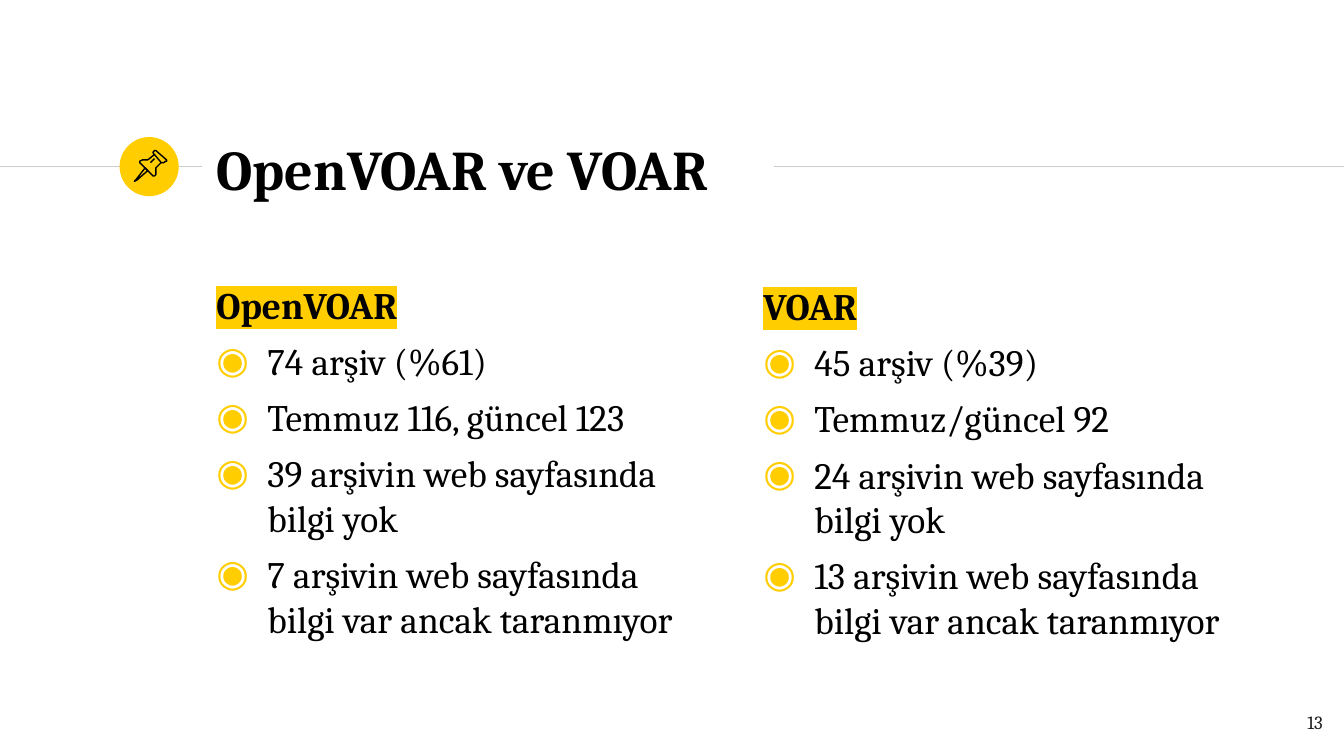
"""Builds a slide comparing two archive directories in two bulleted columns."""
from lxml import etree
from pptx import Presentation
from pptx import util as u
from pptx.dml.color import RGBColor
from pptx.enum import shapes, text
from pptx.oxml.ns import qn

COLORS = {"accent": "FFCD00", "rule": "CCCCCC", "ink": "000000", "number": "1D1D1B"}
FONT = "Cambria"
BULLET_INDENT = u.Inches(0.38)


def add_run(paragraph, wording, size, color="ink", bold=False):
    run = paragraph.add_run()
    run.text = wording
    run.font.size = u.Pt(size)
    run.font.bold = bold
    run.font.color.rgb = RGBColor.from_string(COLORS[color])
    run.font.name = FONT
    return run


def place(holder, left, top, width, height):
    holder.left, holder.top = u.Inches(left), u.Inches(top)
    holder.width, holder.height = u.Inches(width), u.Inches(height)
    frame = holder.text_frame
    frame.word_wrap = True
    frame.auto_size = text.MSO_AUTO_SIZE.NONE
    frame.margin_left = frame.margin_right = u.Inches(0.1)
    frame.margin_top = frame.margin_bottom = u.Inches(0.1)
    return frame


prs = Presentation()
prs.slide_width = u.Inches(10)
prs.slide_height = prs.slide_width * 9 // 16
slide = prs.slides.add_slide(prs.slide_layouts[3])
title, left_body, right_body = slide.placeholders

for start, end in [(0, 1.5), (5.76, 10)]:
    rule = slide.shapes.add_connector(
        shapes.MSO_CONNECTOR.STRAIGHT,
        u.Inches(start), u.Inches(1.24), u.Inches(end), u.Inches(1.24))
    rule.line.color.rgb = RGBColor.from_string(COLORS["rule"])
    rule.line.width = u.Pt(0.75)
    etree.SubElement(rule._element.spPr, qn("a:effectLst"))

badge = slide.shapes.add_shape(
    shapes.MSO_SHAPE.OVAL, u.Inches(0.89), u.Inches(1.02), u.Inches(0.44), u.Inches(0.44))
badge.shadow.inherit = False
badge.fill.solid()
badge.fill.fore_color.rgb = RGBColor.from_string(COLORS["accent"])
badge.line.fill.background()

heading = place(title, 1.51, 1.01, 5.3, 0.48)
heading.vertical_anchor = text.MSO_ANCHOR.MIDDLE
heading.paragraphs[0].alignment = text.PP_ALIGN.LEFT
add_run(heading.paragraphs[0], "OpenVOAR ve VOAR", 30, bold=True)

columns = [
    (left_body, (1.51, 2, 3.66, 3.41), "OpenVOAR", [
        "74 arşiv (%61)",
        "Temmuz 116, güncel 123",
        "39 arşivin web sayfasında bilgi yok",
        "7 arşivin web sayfasında bilgi var ancak taranmıyor"]),
    (right_body, (5.58, 2.01, 3.65, 3.41), "VOAR", [
        "45 arşiv (%39)",
        "Temmuz/güncel 92",
        "24 arşivin web sayfasında bilgi yok",
        "13 arşivin web sayfasında bilgi var ancak taranmıyor"]),
]
for body, box, directory, findings in columns:
    frame = place(body, *box)
    frame.vertical_anchor = text.MSO_ANCHOR.TOP
    label = frame.paragraphs[0]
    label.space_before = u.Pt(6)
    label_props = label._p.get_or_add_pPr()
    label_props.set("marL", "0")
    label_props.set("indent", "0")
    etree.SubElement(label_props, qn("a:buNone"))
    label_run = add_run(label, directory, 20, bold=True)
    highlight = etree.Element(qn("a:highlight"))
    etree.SubElement(highlight, qn("a:srgbClr"), val=COLORS["accent"])
    label_run.font._element.find(qn("a:solidFill")).addnext(highlight)

    for finding in findings:
        item = frame.add_paragraph()
        item.space_before = u.Pt(6)
        item_props = item._p.get_or_add_pPr()
        item_props.set("marL", str(BULLET_INDENT))
        item_props.set("indent", str(-BULLET_INDENT))
        bullet_color = etree.SubElement(item_props, qn("a:buClr"))
        etree.SubElement(bullet_color, qn("a:srgbClr"), val=COLORS["accent"])
        etree.SubElement(item_props, qn("a:buChar"), char="◉")
        add_run(item, finding, 20)

pin_strokes = [
    ([(108, 125), (101, 134), (100, 135), (102, 134), (110, 127)], True),
    ([(115, 115), (120, 121), (122, 121), (123, 120), (124, 120), (124, 119),
      (116, 112), (115, 112), (114, 113), (114, 114)], True),
    ([(115, 115), (110, 119), (108, 119), (106, 119), (104, 120), (104, 121),
      (114, 131), (115, 131), (116, 130), (116, 128), (116, 125), (120, 121)], False),
    ([(112, 121), (115, 118)], False),
]
pin = slide.shapes.add_group_shape()
for points, closed in pin_strokes:
    outline = pin.shapes.build_freeform(*points[0], scale=u.Inches(0.01))
    outline.add_line_segments(points[1:], close=closed)
    stroke = outline.convert_to_shape()
    stroke.shadow.inherit = False
    stroke.fill.background()
    stroke.line.color.rgb = RGBColor.from_string(COLORS["ink"])
    stroke.line.width = u.Pt(0.75)

page_number = place(slide.shapes.add_textbox(0, 0, 0, 0), 9.34, 5.19, 0.6, 0.43)
page_number.paragraphs[0].alignment = text.PP_ALIGN.RIGHT
add_run(page_number.paragraphs[0], "13", 10, "number")

prs.save("out.pptx")
